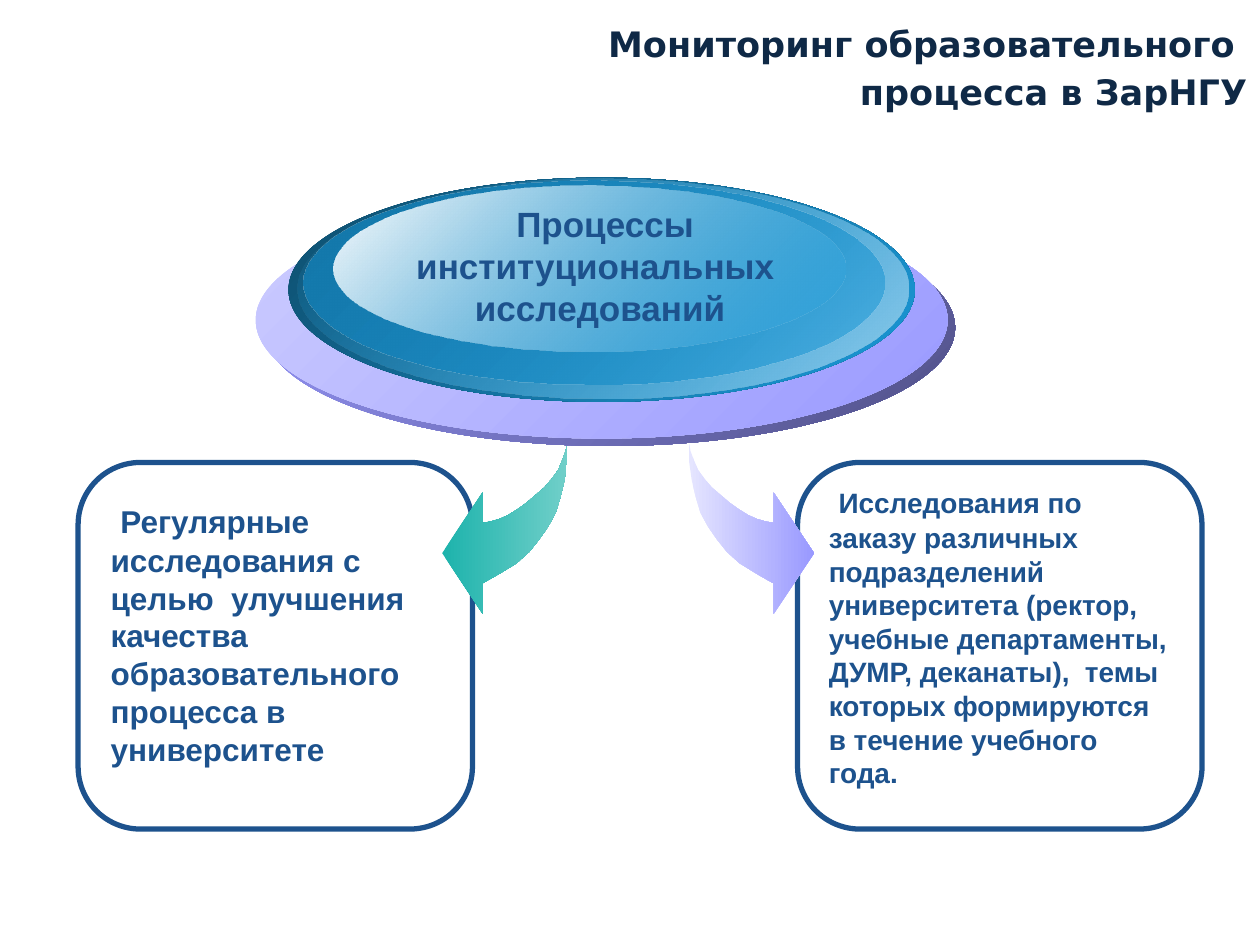
from lxml import etree
from pptx import Presentation
from pptx import util as u
from pptx.dml.color import RGBColor
from pptx.enum import shapes, text
from pptx.oxml.ns import qn

NAVY, BLUE, BLACK = "0F2946", "1D528D", "000000"
LILAC, TEAL = "9999FF", "1DB3AC"


def color(hex_string):
    return RGBColor.from_string(hex_string)


def write(paragraph, words, size=20, fill=BLUE, font="Arial", bold=True):
    run = paragraph.add_run()
    run.text = words
    run.font.size = u.Pt(size)
    run.font.name = font
    run.font.bold = bold
    run.font.color.rgb = color(fill)


def box(left, top, width, height):
    return [u.Inches(n) for n in (left, top, width, height)]


class Deck:
    def __init__(self, width, height):
        self.deck = Presentation()
        self.deck.slide_width = u.Inches(width)
        self.deck.slide_height = u.Inches(height)
        self.slide = self.deck.slides.add_slide(self.deck.slide_layouts[5])

    def title(self, place, lines):
        heading = self.slide.shapes.title
        heading.left, heading.top, heading.width, heading.height = box(*place)
        frame = heading.text_frame
        frame.vertical_anchor = text.MSO_ANCHOR.MIDDLE
        paragraph = frame.paragraphs[0]
        paragraph.alignment = text.PP_ALIGN.RIGHT
        write(paragraph, " ", size=36, font="DejaVu Sans", bold=False)
        for number, line in enumerate(lines):
            if number:
                paragraph.add_line_break()
            write(paragraph, line, fill=NAVY, font="DejaVu Sans")

    def caption(self, place, paragraphs, size, align=text.PP_ALIGN.LEFT):
        """Text box whose paragraphs each open with a 20 pt indent of spaces."""
        frame = self.slide.shapes.add_textbox(*box(*place)).text_frame
        frame.word_wrap = True
        for number, (indent, words) in enumerate(paragraphs):
            paragraph = frame.add_paragraph() if number else frame.paragraphs[0]
            paragraph.alignment = align
            write(paragraph, indent, fill=BLACK)
            write(paragraph, words, size=size)

    def card(self, place):
        card = self.slide.shapes.add_shape(
            shapes.MSO_SHAPE.ROUNDED_RECTANGLE, *box(*place))
        card.shadow.inherit = False
        card.adjustments[0] = 0.17
        card.fill.background()
        card.line.color.rgb = color(BLUE)
        card.line.width = u.Pt(3)

    def shade(self, shape, start, end, angle):
        """Two-stop gradient, clockwise angle; a stop is (hex, opacity %)."""
        shape.shadow.inherit = False
        shape.line.fill.background()
        shape.fill.gradient()
        shape.fill.gradient_angle = -angle % 360
        for stop, (hex_string, _) in zip(shape.fill.gradient_stops, (start, end)):
            stop.color.rgb = color(hex_string)
        gradient = shape._element.spPr.find(qn("a:gradFill"))
        for tint, (_, opacity) in zip(gradient.iter(qn("a:srgbClr")), (start, end)):
            if opacity < 100:
                etree.SubElement(tint, qn("a:alpha"), val=str(opacity * 1000))

    def disc(self, place, start, end):
        disc = self.slide.shapes.add_shape(shapes.MSO_SHAPE.OVAL, *box(*place))
        self.shade(disc, start, end, angle=45)

    def curved_arrow(self, tail_x, tail_y, direction, start, end):
        """Arrow bending down from its tail; direction -1 is left, 1 is right."""
        points = [(u.Inches(tail_x + direction * x), u.Inches(tail_y + y))
                  for x, y in ARROW]
        builder = self.slide.shapes.build_freeform(*points[0], scale=1.0)
        builder.add_line_segments(points[1:], close=True)
        self.shade(builder.convert_to_shape(), start, end, angle=0)


# Offsets from the tail: outer curve, head, inner curve
ARROW = [
    (0, 0), (0, 0.15), (0.02, 0.29), (0.05, 0.42), (0.09, 0.55), (0.15, 0.66),
    (0.22, 0.76), (0.3, 0.86), (0.4, 0.95), (0.53, 1.03), (0.67, 1.11),
    (0.67, 1.35), (0.99, 0.87), (0.67, 0.39), (0.67, 0.63),
    (0.61, 0.62), (0.54, 0.6), (0.47, 0.57), (0.39, 0.52), (0.32, 0.47),
    (0.25, 0.41), (0.18, 0.35), (0.12, 0.28), (0.07, 0.21), (0.04, 0.14),
    (0.01, 0.06),
]

# Back to front: place, first and last gradient stop
DISCS = [
    ((2.09, 1.66, 5.49, 1.88), (LILAC, 100), ("4F4F85", 100)),
    ((2.03, 1.6, 5.49, 1.88), ("CCCCFF", 100), (LILAC, 100)),
    ((2.29, 1.41, 4.97, 1.78), ("0D4C6B", 100), ("1B9AD9", 100)),
    ((2.36, 1.42, 4.85, 1.74), ("1B9AD9", 0), ("93CDEB", 100)),
    ((2.41, 1.43, 4.61, 1.62), ("1478AB", 100), ("1B9AD9", 48)),
    ((2.65, 1.47, 4.06, 1.32), ("FFFFFF", 100), ("1B9AD9", 38)),
]


def main():
    page = Deck(10, 7.5)
    page.title((1.25, 0, 8.75, 0.85),
               ["Мониторинг образовательного ", "процесса в ЗарНГУ"])

    page.card((6.33, 3.67, 3.21, 2.91))
    page.card((0.62, 3.67, 3.13, 2.91))
    page.caption((0.78, 3.91, 2.8, 2.26), [
        (" ", "Регулярные исследования с целью  улучшения качества  "
              "образовательного процесса в университете")], size=18)

    page.curved_arrow(4.5, 3.52, -1, (TEAL, 100), ("70CFC9", 100))
    page.curved_arrow(5.47, 3.52, 1, ("E5E5FF", 100), (LILAC, 100))

    for place, start, end in DISCS:
        page.disc(place, start, end)
    page.caption((3.2, 1.56, 3.05, 1.35), [
        ("  ", "Процессы институциональных "), (" ", "исследований")],
        size=20, align=text.PP_ALIGN.CENTER)

    page.caption((6.48, 3.75, 2.89, 2.86), [
        (" ", "Исследования по заказу различных подразделений университета "
              "(ректор, учебные департаменты, ДУМР, деканаты),  темы которых "
              "формируются в течение учебного года.")], size=16)
    page.deck.save("out.pptx")


if __name__ == "__main__":
    main()
